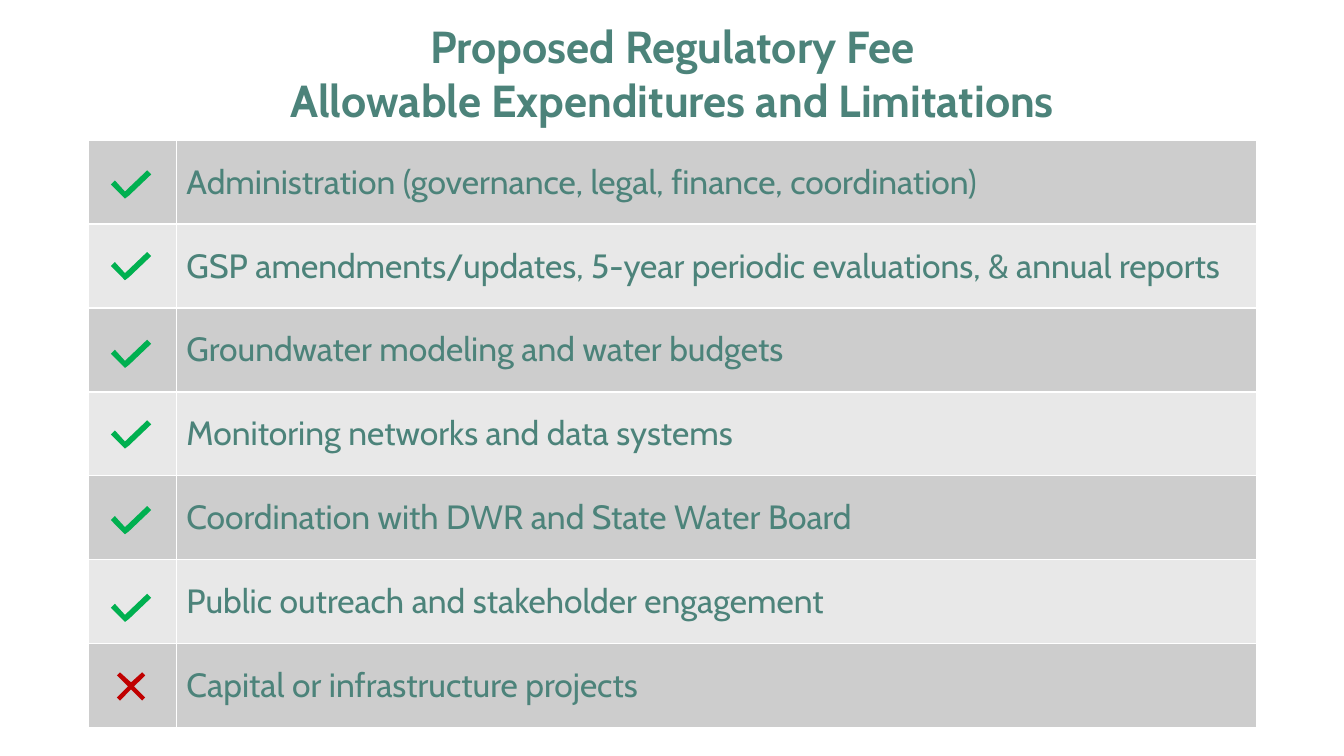
from lxml.etree import SubElement
from pptx import Presentation
from pptx.dml.color import RGBColor
from pptx.enum.text import MSO_ANCHOR, MSO_AUTO_SIZE, PP_ALIGN
from pptx.oxml.ns import qn
from pptx.util import Inches, Pt

COLORS = {"teal": "4C837A", "dark": "CDCDCD", "light": "E8E8E8",
          "white": "FFFFFF", "green": "00B050", "red": "C00000"}

CHECK = [(36, 0), (14, 21), (4, 10), (0, 14), (14, 28), (18, 25), (40, 4)]
CROSS = [(28, 3), (25, 0), (14, 10), (3, 0), (0, 3), (11, 14),
         (0, 25), (3, 28), (14, 17), (25, 28), (28, 25), (17, 14)]

ITEMS = [
    ("Administration (governance, legal, finance, coordination)", 1.69),
    ("GSP amendments/updates, 5-year periodic evaluations, & annual reports", 2.5),
    ("Groundwater modeling and water budgets", 3.37),
    ("Monitoring networks and data systems", 4.17),
    ("Coordination with DWR and State Water Board", 5.02),
    ("Public outreach and stakeholder engagement", 5.89),
    ("Capital or infrastructure projects", 6.67),
]


def rgb(name):
    return RGBColor.from_string(COLORS[name])


def write(p, text, size=24, bold=False, color="teal", font="Cabin", align=PP_ALIGN.LEFT):
    p.alignment = align
    r = p.add_run()
    r.text = text
    r.font.name = font
    r.font.size = Pt(size)
    r.font.bold = bold
    r.font.color.rgb = rgb(color)


class Deck:
    def __init__(self, prs):
        self.s = prs.slides.add_slide(prs.slide_layouts[5])

    def title(self, lines, left, top, width, height):
        sp = self.s.shapes.title
        sp.left, sp.top = Inches(left), Inches(top)
        sp.width, sp.height = Inches(width), Inches(height)
        tf = sp.text_frame
        tf.word_wrap = True
        tf.auto_size = MSO_AUTO_SIZE.NONE
        tf.vertical_anchor = MSO_ANCHOR.MIDDLE
        for i, line in enumerate(lines):
            p = tf.add_paragraph() if i else tf.paragraphs[0]
            p.space_before = Pt(0)
            write(p, line, size=32, bold=True, align=PP_ALIGN.CENTER)

    def borders(self, cell):
        tcPr = cell._tc.get_or_add_tcPr()
        for side in ("lnL", "lnR", "lnT", "lnB"):
            ln = SubElement(tcPr, qn(f"a:{side}"), w=str(Pt(1)))
            fill = SubElement(ln, qn("a:solidFill"))
            SubElement(fill, qn("a:srgbClr"), val=COLORS["white"])

    def table(self, texts, left, top, widths, height):
        frame = self.s.shapes.add_table(len(texts), len(widths), Inches(left), Inches(top),
                                        Inches(sum(widths)), Inches(height))
        table = frame.table
        table.first_row = False
        table.horz_banding = False
        for column, width in zip(table.columns, widths):
            column.width = Inches(width)
        for i, text in enumerate(texts):
            for cell in table.rows[i].cells:
                self.borders(cell)
                cell.fill.solid()
                cell.fill.fore_color.rgb = rgb("light" if i % 2 else "dark")
                cell.vertical_anchor = MSO_ANCHOR.MIDDLE
            write(table.cell(i, 1).text_frame.paragraphs[0], text)

    def mark(self, points, left, top, color):
        builder = self.s.shapes.build_freeform(*points[0], scale=Inches(0.01))
        builder.add_line_segments(points[1:], close=True)
        sp = builder.convert_to_shape(Inches(left), Inches(top))
        sp.shadow.inherit = False
        sp.fill.solid()
        sp.fill.fore_color.rgb = rgb(color)
        sp.line.fill.background()


def main():
    prs = Presentation()
    prs.slide_width, prs.slide_height = Inches(13.33), Inches(7.5)
    deck = Deck(prs)
    deck.title(["Proposed Regulatory Fee", "Allowable Expenditures and Limitations"],
               1.67, 0.1, 10, 1.24)
    deck.table([text for text, top in ITEMS], 0.88, 1.39, [0.87, 10.71], 5.83)
    for text, top in ITEMS[:-1]:
        deck.mark(CHECK, 1.1, top, "green")
    deck.mark(CROSS, 1.16, ITEMS[-1][1], "red")
    prs.save("out.pptx")


if __name__ == "__main__":
    main()
